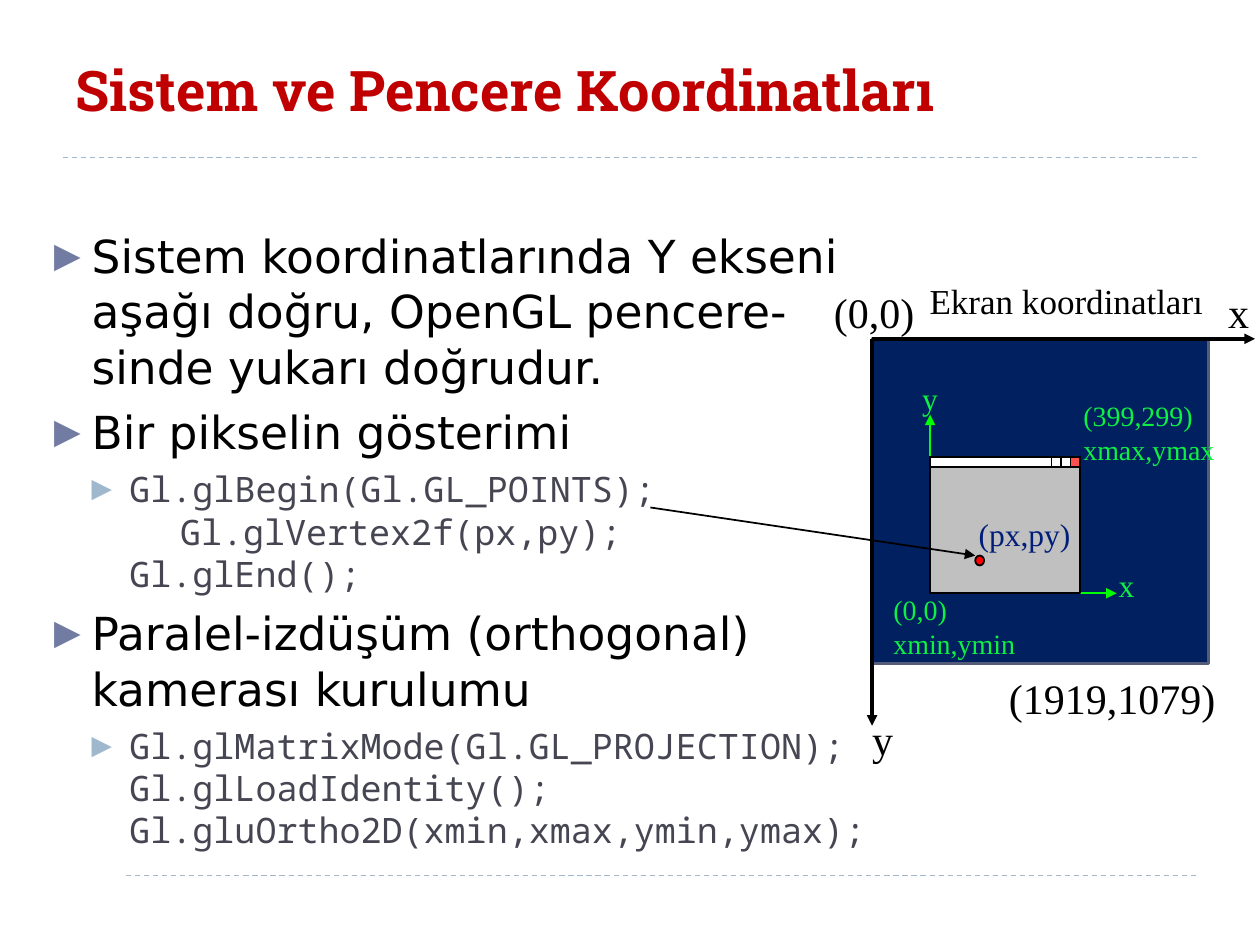
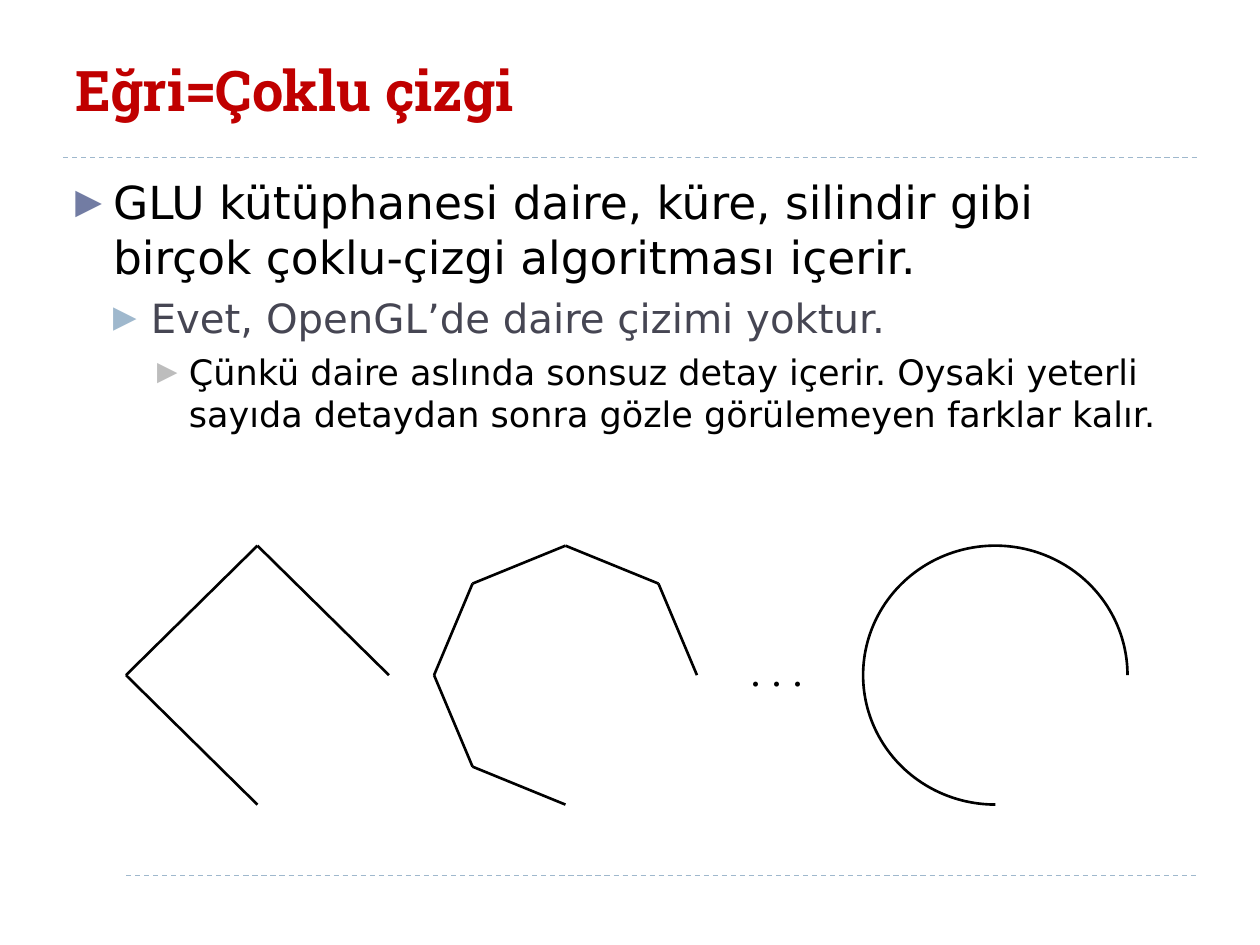
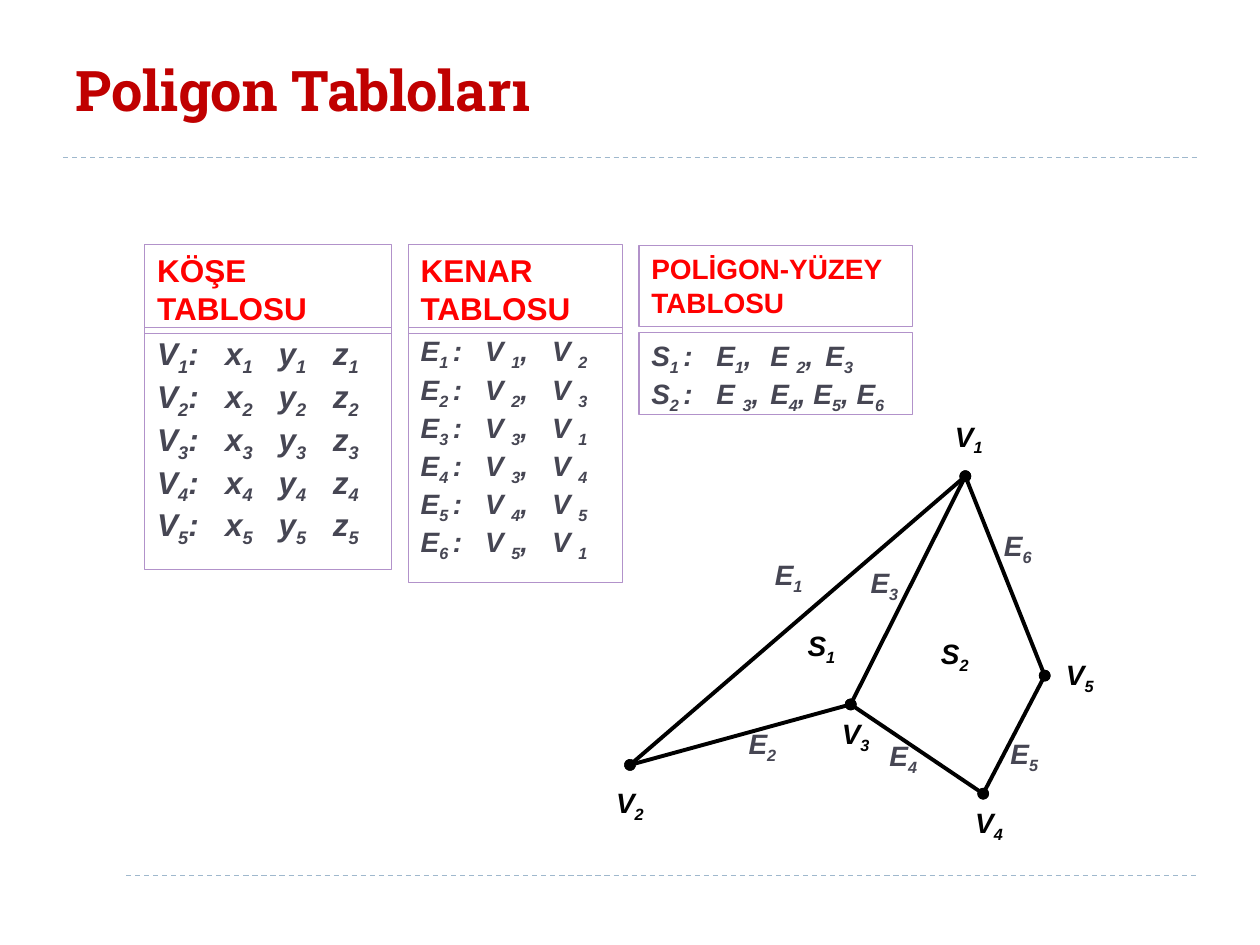
from dataclasses import dataclass
from itertools import pairwise
from math import cos, radians, sin

from lxml.etree import SubElement
from pptx import Presentation
from pptx.dml.color import RGBColor
from pptx.enum.dml import MSO_LINE
from pptx.enum.shapes import MSO_CONNECTOR, MSO_SHAPE
from pptx.enum.text import MSO_ANCHOR, MSO_AUTO_SIZE, PP_ALIGN
from pptx.oxml.ns import qn
from pptx.util import Cm, Pt

COLORS = {
    "title": "C00000", "rule": "9FB8CD", "black": "000000", "white": "FFFFFF",
    "slate": "464653", "screen": "002060", "screen_edge": "545C79",
    "axis": "00FF00", "green_text": "0EF044", "navy_text": "011E79",
    "window": "C0C0C0", "close": "FF5050", "red": "FF0000", "frame": "B292CA",
    "bullet0": "727CA3", "bullet1": "9FB8CD", "bullet2": "BDBDBD",
}
TITLE_FONT, BODY_FONT, CODE_FONT = "Roboto Slab", "DejaVu Sans", "Noto Sans Mono"
LABEL_FONT, TABLE_FONT = "Times New Roman", "Arial"
LEADING, ROW_LEADING = 1.21, 1.36
LEVELS = [(0.76, 0.76, 6), (1.52, 0.76, 5), (2.29, 0.64, 5)]
EDGES = [(1, 2), (2, 3), (3, 1), (3, 4), (4, 5), (5, 1)]


@dataclass
class Box:
    """A rectangle in centimetres."""
    left: float
    top: float
    width: float
    height: float

    def inner(self, left, top, width, height):
        """Return a box placed relative to this one."""
        return Box(self.left + left, self.top + top, width, height)

    def point(self, x, y):
        """Return a point measured from the top left corner."""
        return self.left + x, self.top + y

    def lengths(self):
        """Return the four lengths for a shape."""
        return Cm(self.left), Cm(self.top), Cm(self.width), Cm(self.height)


def color(name):
    """Look up a named colour."""
    return RGBColor.from_string(COLORS[name])


def style_span(span, size, ink, font, bold=False, italic=False):
    """Format one run."""
    span.font.size, span.font.name = Pt(size), font
    span.font.bold, span.font.italic = bold, italic
    span.font.color.rgb = color(ink)


def style_para(para, size, leading=LEADING):
    """Align a paragraph left with a fixed line pitch."""
    para.alignment = PP_ALIGN.LEFT
    para.line_spacing = Pt(size * leading)


def add_line(page, start, end, ink="black", weight=1.0, head=None, tail=None, dash=False):
    """Draw a straight line, with optional line ends."""
    line = page.shapes.add_connector(MSO_CONNECTOR.STRAIGHT, *(Cm(n) for n in (*start, *end)))
    line.line.color.rgb = color(ink)
    line.line.width = Pt(weight)
    if dash:
        line.line.dash_style = MSO_LINE.DASH
    properties = line.element.spPr
    outline = properties.find(qn("a:ln"))
    for tag, kind in (("a:headEnd", head), ("a:tailEnd", tail)):
        if kind:
            SubElement(outline, qn(tag), type=kind)
    SubElement(properties, qn("a:effectLst"))


def add_figure(page, kind, box, fill=None, edge="black", weight=1.0):
    """Draw a preset shape."""
    figure = page.shapes.add_shape(kind, *box.lengths())
    figure.shadow.inherit = False
    if fill:
        figure.fill.solid()
        figure.fill.fore_color.rgb = color(fill)
    else:
        figure.fill.background()
    figure.line.color.rgb = color(edge)
    figure.line.width = Pt(weight)
    return figure


def add_label(page, box, text, size, ink):
    """Add an unwrapped label of one or more lines."""
    label = page.shapes.add_textbox(*box.lengths())
    frame = label.text_frame
    frame.text = text
    frame.word_wrap = False
    frame.auto_size = MSO_AUTO_SIZE.SHAPE_TO_FIT_TEXT
    for para in frame.paragraphs:
        style_para(para, size)
        for span in para.runs:
            style_span(span, size, ink, LABEL_FONT)


def write_indexed(para, text, size, ink):
    """Write bold italic text whose pieces between bars are subscripts."""
    for number, piece in enumerate(text.split("|")):
        span = para.add_run()
        span.text = piece
        style_span(span, size, ink, TABLE_FONT, bold=True, italic=True)
        if number % 2:
            span.font._element.set("baseline", "-25000")


def add_page(deck, title):
    """Add a slide with its title and two dashed rules."""
    page = deck.slides.add_slide(deck.slide_layouts.get_by_name("Title Only"))
    heading = page.shapes.title
    heading.left, heading.top, heading.width, heading.height = Box(1.27, 0.43, 22.86, 2.74).lengths()
    frame = heading.text_frame
    frame.text = title
    frame.vertical_anchor = MSO_ANCHOR.MIDDLE
    frame.auto_size = MSO_AUTO_SIZE.NONE
    para = frame.paragraphs[0]
    para.alignment = PP_ALIGN.LEFT
    style_span(para.runs[0], 32, "title", TITLE_FONT, bold=True)
    for left, top in ((1.27, 3.17), (2.54, 17.65)):
        add_line(page, (left, top), (24.13, top), "rule", 0.75, dash=True)
    return page


def add_bullets(page, box, items):
    """Write bulleted paragraphs given as level, size, font, colour and text."""
    frame = page.shapes.add_textbox(*box.lengths()).text_frame
    frame.word_wrap = True
    frame.text = "\n" * (len(items) - 1)
    for para, (level, size, font, ink, text) in zip(frame.paragraphs, items):
        margin, hanging, before = LEVELS[level]
        para.text = text
        para.level = level
        style_para(para, size)
        para.space_before = Pt(before)
        for span in para.runs:
            style_span(span, size, ink, font)
        properties = para._p.get_or_add_pPr()
        properties.set("marL", str(Cm(margin)))
        properties.set("indent", str(-Cm(hanging)))
        tint = SubElement(properties, qn("a:buClr"))
        SubElement(tint, qn("a:srgbClr"), val=COLORS[f"bullet{level}"])
        SubElement(properties, qn("a:buSzPct"), val="76000")
        SubElement(properties, qn("a:buFont"), typeface=BODY_FONT)
        SubElement(properties, qn("a:buChar"), char="▶")


def draw_window(page, box):
    """Draw the application window with its axes, title bar and buttons."""
    origin = box.point(0, box.height)
    add_line(page, origin, box.point(0, -0.86), "axis", tail="triangle")
    add_line(page, origin, box.point(3.76, box.height), "axis", tail="triangle")
    add_figure(page, MSO_SHAPE.RECTANGLE, box, "window")
    bar, button = 0.2, 0.19
    add_figure(page, MSO_SHAPE.RECTANGLE, box.inner(0, 0, box.width, bar), "white")
    for place, fill in enumerate(("close", "white", "white"), 1):
        spot = box.inner(box.width - place * button, 0, button, bar)
        add_figure(page, MSO_SHAPE.RECTANGLE, spot, fill)


def draw_screen(page, box):
    """Draw the screen, its axes, the window and the marked pixel."""
    add_figure(page, MSO_SHAPE.RECTANGLE, box, "screen", "screen_edge", 1.5)
    for end in ((7.72, 0), (0, 7.8)):
        add_line(page, box.point(0, 0), box.point(*end), weight=2, tail="triangle")
    draw_window(page, box.inner(1.17, 2.39, 3.02, 2.74))
    labels = [
        (6.93, -1.19, 0.94, 1.27, "x", 24, "black"),
        (0.91, -1.32, 6.07, 1.12, "Ekran koordinatları", 20, "black"),
        (-0.25, 7.42, 0.94, 1.27, "y", 24, "black"),
        (-1.02, -1.19, 2.16, 1.27, "(0,0)", 24, "black"),
        (2.51, 6.6, 4.72, 1.27, "(1919,1079)", 24, "black"),
        (0.18, 4.98, 3, 1.63, "(0,0)\nxmin,ymin", 16, "green_text"),
        (4.01, 1.07, 3.2, 1.63, "(399,299)\nxmax,ymax", 16, "green_text"),
        (4.72, 4.44, 0.84, 1.02, "x", 18, "green_text"),
        (0.76, 0.69, 0.84, 1.02, "y", 18, "green_text"),
        (1.9, 3.43, 2.39, 1.02, "(px,py)", 18, "navy_text"),
    ]
    for left, top, width, height, text, size, ink in labels:
        add_label(page, box.inner(left, top, width, height), text, size, ink)
    add_figure(page, MSO_SHAPE.OVAL, box.inner(2.08, 4.37, 0.18, 0.2), "red")
    add_line(page, box.point(-4.47, 3.4), box.point(2.08, 4.37), tail="triangle")


def draw_curves(page, box):
    """Approach three quarters of a circle with ever shorter lines."""
    across, down = 2.65, box.height / 2
    for center, step in ((across, 90), (8.86, 45)):
        corners = [
            box.point(center + across * cos(radians(angle)), down - down * sin(radians(angle)))
            for angle in range(0, 271, step)
        ]
        for start, end in pairwise(corners):
            add_line(page, start, end, weight=1.5)
    add_label(page, box.inner(12.34, 1.85, 1.57, 1.12), ". . .", 24, "black")
    arc = add_figure(page, MSO_SHAPE.ARC, box.inner(14.86, 0, 5.33, box.height), weight=1.5)
    arc.adjustments[0], arc.adjustments[1] = 54.0, 0.0


def add_list(page, box, title, size, head_height, body_top, row_size, stops, rows):
    """Draw a framed heading above a framed list of indexed rows."""
    head = box.inner(0, 0, box.width, head_height)
    body = box.inner(0, body_top, box.width, box.height - body_top)
    frames = []
    for area in (head, body):
        frame = add_figure(page, MSO_SHAPE.RECTANGLE, area, edge="frame", weight=0.75).text_frame
        frame.word_wrap = True
        frame.vertical_anchor = MSO_ANCHOR.TOP
        frames.append(frame)
    heading, listing = frames
    heading.text = title
    style_para(heading.paragraphs[0], size)
    style_span(heading.paragraphs[0].runs[0], size, "red", TABLE_FONT, bold=True)
    listing.text = "\n" * (len(rows) - 1)
    for para, row in zip(listing.paragraphs, rows):
        style_para(para, row_size, ROW_LEADING)
        tabs = SubElement(para._p.get_or_add_pPr(), qn("a:tabLst"))
        for stop in stops:
            SubElement(tabs, qn("a:tab"), pos=str(Cm(stop)), algn="l")
        write_indexed(para, row, row_size, "slate")


def draw_polygons(page, box):
    """Draw the two joined polygons with their names."""
    corners = {1: (7.29, 1.19), 2: (0.53, 7.01), 3: (4.98, 5.79), 4: (7.65, 7.59), 5: (8.89, 5.21)}
    for start, end in EDGES:
        add_line(page, box.point(*corners[start]), box.point(*corners[end]),
                 weight=2.25, head="oval", tail="oval")
    names = {
        "V": [(6.83, 0), (0, 7.39), (4.55, 5.99), (7.24, 7.8), (9.07, 4.8)],
        "S": [(3.86, 4.22), (6.55, 4.39)],
        "E": [(3.2, 2.79), (2.67, 6.2), (5.13, 2.95), (5.51, 6.45), (7.95, 6.4), (7.82, 2.21)],
    }
    for letter, places in names.items():
        for number, (left, top) in enumerate(places, 1):
            label = page.shapes.add_textbox(*box.inner(left, top, 1.78, 0.94).lengths())
            label.text_frame.word_wrap = True
            para = label.text_frame.paragraphs[0]
            style_para(para, 16)
            write_indexed(para, f"{letter}|{number}", 16, "slate" if letter == "E" else "black")


def build_coordinates(deck):
    """Build the slide on system and window coordinates."""
    page = add_page(deck, "Sistem ve Pencere Koordinatları")
    topic, code = (0, 26, BODY_FONT, "black"), (1, 20, CODE_FONT, "slate")
    add_bullets(page, Box(0.84, 4.47, 17.42, 13.51), [
        (*topic, "Sistem koordinatlarında Y ekseni aşağı doğru, OpenGL pencere-sinde yukarı doğrudur."),
        (*topic, "Bir pikselin gösterimi"),
        (*code, "Gl.glBegin(Gl.GL_POINTS);\v\tGl.glVertex2f(px,py);\vGl.glEnd();"),
        (*topic, "Paralel-izdüşüm (orthogonal) kamerası kurulumu"),
        (*code, "Gl.glMatrixMode(Gl.GL_PROJECTION);\vGl.glLoadIdentity();\v"
                "Gl.gluOrtho2D(xmin,xmax,ymin,ymax);"),
    ])
    draw_screen(page, Box(17.58, 6.83, 6.78, 6.55))


def build_curves(deck):
    """Build the slide on curves made of lines."""
    page = add_page(deck, "Eğri=Çoklu çizgi")
    add_bullets(page, Box(1.27, 3.38, 22.86, 13.72), [
        (0, 26, BODY_FONT, "black",
         "GLU kütüphanesi daire, küre, silindir gibi birçok çoklu-çizgi algoritması içerir."),
        (1, 23, BODY_FONT, "slate", "Evet, OpenGL’de daire çizimi yoktur."),
        (2, 20, BODY_FONT, "black",
         "Çünkü daire aslında sonsuz detay içerir. Oysaki yeterli sayıda detaydan sonra "
         "gözle görülemeyen farklar kalır."),
    ])
    draw_curves(page, Box(2.54, 11, 20.2, 5.22))


def build_polygon_tables(deck):
    """Build the slide on vertex, edge and surface lists."""
    page = add_page(deck, "Poligon Tabloları")
    vertices = [f"V|{n}|:\tx|{n}|\ty|{n}|\tz|{n}" for n in range(1, 6)]
    edges = [f"E|{n} |:\tV |{a}|,\tV |{b}" for n, (a, b) in enumerate(EDGES, 1)]
    surfaces = ["S|1 |:\tE|1|,\tE |2|,\tE|3", "S|2 |:\tE |3|,\tE|4|, E|5|, E|6"]
    add_list(page, Box(2.92, 4.93, 4.98, 6.55), "KÖŞE TABLOSU", 18, 1.8, 1.68,
             18, (1.37, 2.45, 3.54), vertices)
    add_list(page, Box(8.23, 4.93, 4.32, 6.81), "KENAR TABLOSU", 18, 1.8, 1.68,
             16, (1.3, 2.65), edges)
    add_list(page, Box(12.88, 4.95, 5.51, 3.41), "POLİGON-YÜZEY TABLOSU", 16, 1.63, 1.76,
             16, (1.31, 2.4, 3.51), surfaces)
    draw_polygons(page, Box(12.17, 8.41, 10.85, 8.74))


def main():
    """Build and save the deck."""
    deck = Presentation()
    deck.slide_width, deck.slide_height = Cm(25.4), Cm(19.05)
    build_coordinates(deck)
    build_curves(deck)
    build_polygon_tables(deck)
    deck.save("out.pptx")


if __name__ == "__main__":
    main()
